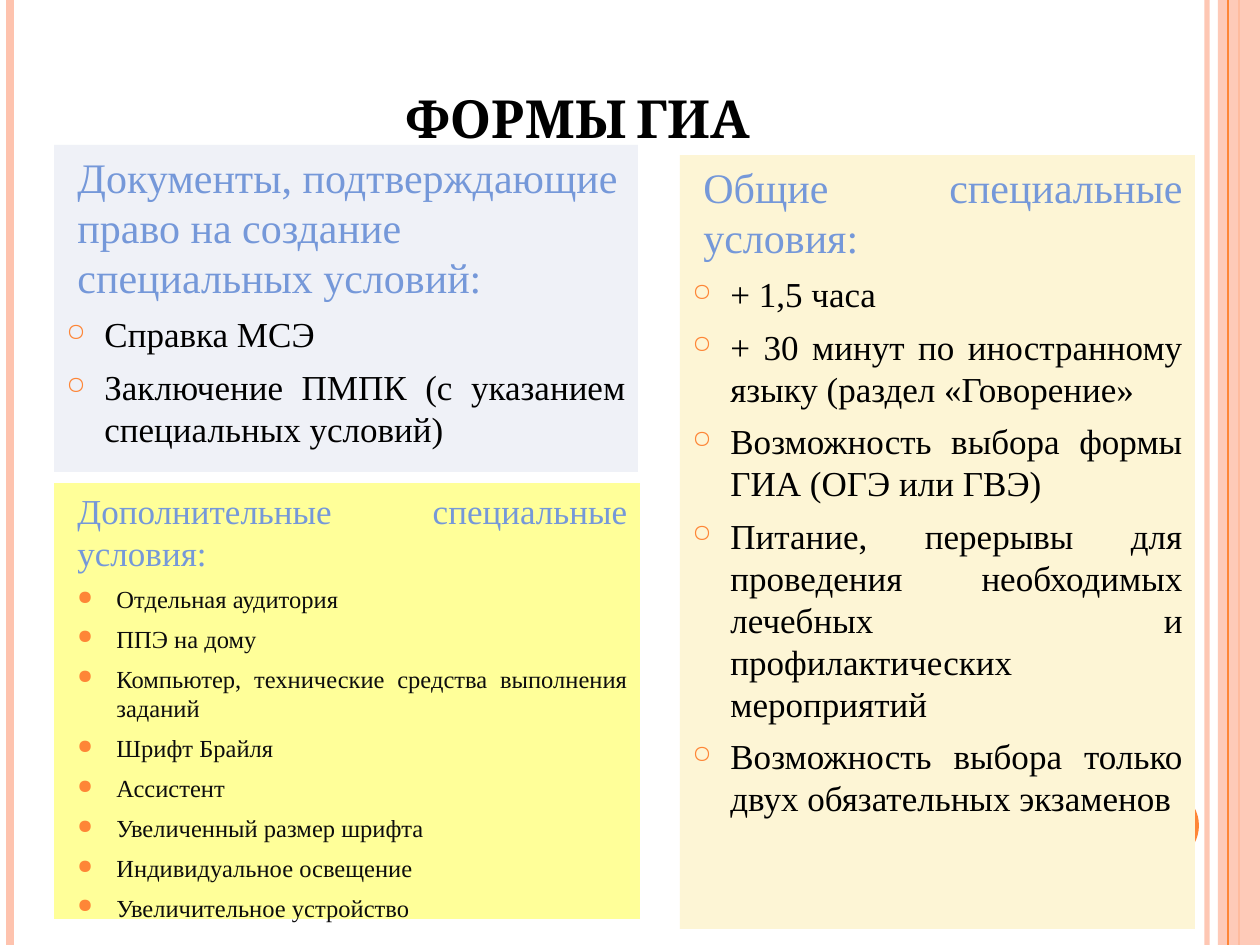
from pptx import Presentation
from pptx.dml.color import RGBColor
from pptx.enum.shapes import MSO_CONNECTOR, MSO_SHAPE
from pptx.enum.text import MSO_ANCHOR, PP_ALIGN
from pptx.oxml.ns import qn
from pptx.util import Pt
from lxml import etree

PX = 914400 / 126
LEFT, CENTER, JUSTIFY = PP_ALIGN.LEFT, PP_ALIGN.CENTER, PP_ALIGN.JUSTIFY
BOTTOM, TOP = MSO_ANCHOR.BOTTOM, MSO_ANCHOR.TOP
STRAIGHT = MSO_CONNECTOR.STRAIGHT
RECTANGLE, OVAL = MSO_SHAPE.RECTANGLE, MSO_SHAPE.OVAL
COLORS = {
    "peach": "FEC3AE", "orange": "FE8637", "blue": "7598D9", "black": "000000",
    "ink": "0D0D0D", "lavender": "EFF1F7", "yellow": "FFFF99", "cream": "FDF5D5",
}


def add_block(shape_type, box, color):
    block = slide.shapes.add_shape(shape_type, *[int(v * PX) for v in box])
    block.shadow.inherit = False
    block.fill.solid()
    block.fill.fore_color.rgb = RGBColor.from_string(COLORS[color])
    block.line.fill.background()
    return block


def add_text(paragraph, text, alignment, font, color):
    paragraph.alignment = alignment
    run = paragraph.add_run()
    run.text = text
    for name, value in font.items():
        setattr(run.font, name, value)
    run.font.color.rgb = RGBColor.from_string(COLORS[color])
    return run


prs = Presentation()
prs.slide_width, prs.slide_height = int(1260 * PX), int(945 * PX)
slide = prs.slides.add_slide(prs.slide_layouts[6])

stripes = [(1207, "peach", 3), (10, "peach", 4.5), (1239, "orange", 1.5), (1228, "orange", 0.75)]
for x, color, width in stripes:
    if x == 1228:
        side_band = add_block(RECTANGLE, (1218, 0, 42, 945), "peach")
        tint = side_band.fill._xPr.find(qn("a:solidFill"))[0]
        etree.SubElement(tint, qn("a:alpha"), val="87000")
    stripe = slide.shapes.add_connector(STRAIGHT, int(x * PX), 0, int(x * PX), int(945 * PX))
    stripe.line.color.rgb = RGBColor.from_string(COLORS[color])
    stripe.line.width = Pt(width)
    etree.SubElement(stripe._element.spPr, qn("a:effectLst"))
    if width == 3:
        tint = stripe._element.spPr.find(qn("a:ln")).find(qn("a:solidFill"))[0]
        etree.SubElement(tint, qn("a:alpha"), val="93000")

add_block(OVAL, (1124, 788, 75, 75), "orange")

title = slide.shapes.add_textbox(*[int(v * PX) for v in (63, 38, 1029, 117)])
title.text_frame.word_wrap = True
title.text_frame.vertical_anchor = BOTTOM
title_font = {"name": "Cambria", "size": Pt(30), "bold": True}
heading_run = add_text(title.text_frame.paragraphs[0], "ФОРМЫ ГИА", CENTER, title_font, "black")
heading_run.font._element.set("cap", "small")

panels = [
    {"box": (54, 145, 584, 327), "fill": "lavender", "heading_size": 24, "size": 20,
     "color": "black", "bullet": "○", "bullet_size": 70, "margin": 38, "hang": 38,
     "heading": (LEFT, "Документы, подтверждающие право на создание специальных условий:"),
     "items": [
         (LEFT, "Справка МСЭ"),
         (JUSTIFY, "Заключение ПМПК (с указанием специальных условий)")]},
    {"box": (54, 483, 586, 436), "fill": "yellow", "heading_size": 20, "size": 14,
     "color": "ink", "bullet": "●", "bullet_size": 80, "margin": 50, "hang": 39,
     "heading": (JUSTIFY, "Дополнительные специальные условия:"),
     "items": [
         (JUSTIFY, "Отдельная аудитория"),
         (JUSTIFY, "ППЭ на дому"),
         (JUSTIFY, "Компьютер, технические средства выполнения заданий"),
         (LEFT, "Шрифт Брайля"),
         (LEFT, "Ассистент"),
         (LEFT, "Увеличенный размер шрифта"),
         (LEFT, "Индивидуальное освещение"),
         (LEFT, "Увеличительное устройство")]},
    {"box": (680, 155, 515, 774), "fill": "cream", "heading_size": 24, "size": 20,
     "color": "black", "bullet": "○", "bullet_size": 70, "margin": 38, "hang": 38,
     "heading": (JUSTIFY, "Общие специальные условия:"),
     "items": [
         (JUSTIFY, "+ 1,5 часа"),
         (JUSTIFY, "+ 30 минут по иностранному языку (раздел «Говорение»"),
         (JUSTIFY, "Возможность выбора формы ГИА (ОГЭ или ГВЭ)"),
         (JUSTIFY, "Питание, перерывы для проведения необходимых лечебных "
                   "и профилактических мероприятий"),
         (JUSTIFY, "Возможность выбора только двух обязательных экзаменов")]},
]

for panel in panels:
    frame = add_block(RECTANGLE, panel["box"], panel["fill"]).text_frame
    frame.word_wrap = True
    frame.vertical_anchor = TOP
    for row, (alignment, text) in enumerate([panel["heading"], *panel["items"]]):
        paragraph = frame.add_paragraph() if row else frame.paragraphs[0]
        paragraph.space_before = Pt(6)
        size = panel["size"] if row else panel["heading_size"]
        font = {"name": "Times New Roman", "size": Pt(size)}
        add_text(paragraph, text, alignment, font, panel["color"] if row else "blue")
        props = paragraph._p.get_or_add_pPr()
        props.set("marL", str(int((panel["margin"] if row else 11) * PX)))
        props.set("indent", str(int(-panel["hang"] * PX) if row else 0))
        if row:
            bullet_color = etree.SubElement(props, qn("a:buClr"))
            etree.SubElement(bullet_color, qn("a:srgbClr"), val=COLORS["orange"])
            etree.SubElement(props, qn("a:buSzPct"), val=str(panel["bullet_size"] * 1000))
            etree.SubElement(props, qn("a:buChar"), char=panel["bullet"])

prs.save("out.pptx")
